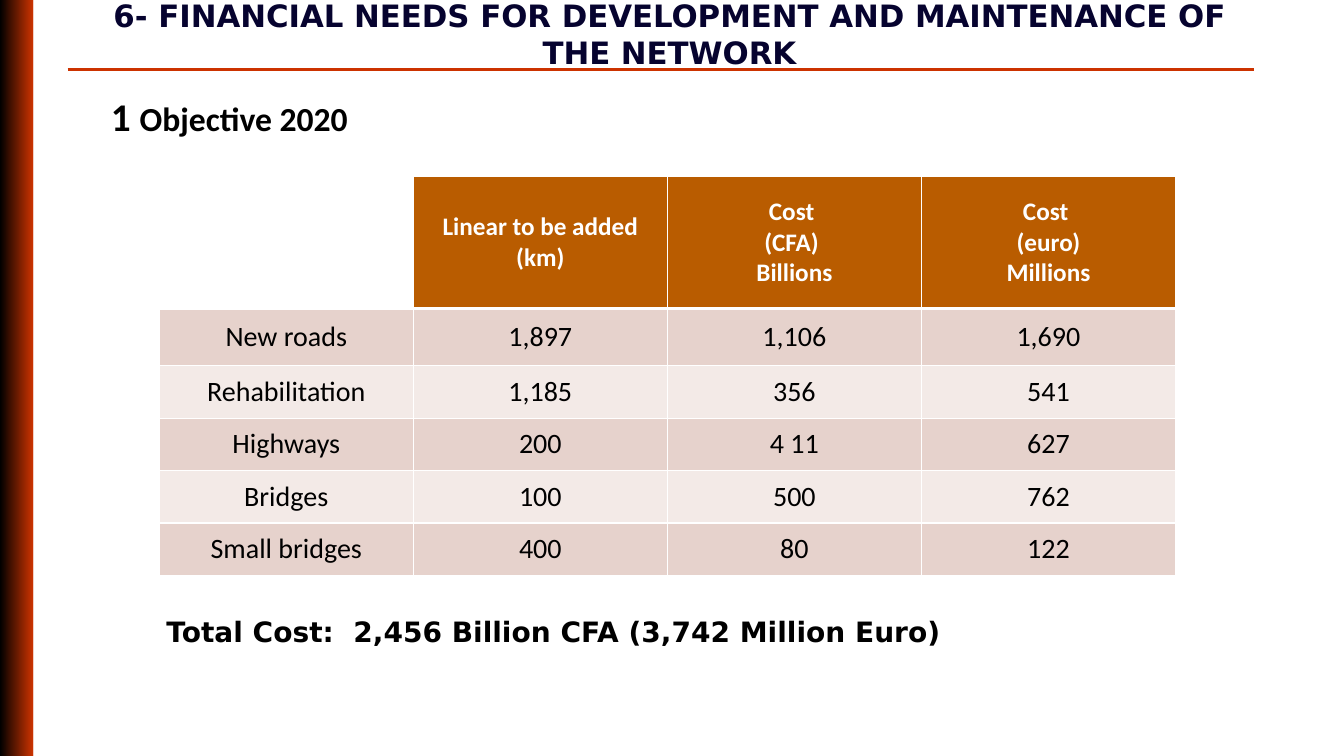
from lxml import etree
from pptx import Presentation
from pptx.dml.color import RGBColor
from pptx.enum import shapes, text
from pptx.oxml import ns
from pptx.util import Inches, Pt

BLACK = RGBColor(0x00, 0x00, 0x00)
WHITE = RGBColor(0xFF, 0xFF, 0xFF)
RED = RGBColor(0xCC, 0x33, 0x00)
NAVY = RGBColor(0x06, 0x03, 0x2F)
BROWN = RGBColor(0xB9, 0x5C, 0x00)
ROSE = RGBColor(0xE6, 0xD2, 0xCC)
PALE = RGBColor(0xF3, 0xEA, 0xE7)
SANS, BODY = "DejaVu Sans", "Calibri"
ALIGN = text.PP_ALIGN

HEAD = ["", "Linear to be added\v(km)", "Cost \n(CFA) \nBillions",
        "Cost \n(euro)\nMillions"]
ROWS = [
    ["New roads", "1,897", "1,106", "1,690"],
    ["Rehabilitation", "1,185", "356", "541"],
    ["Highways", "200", "4 11", "627"],
    ["Bridges", "100", "500", "762"],
    ["Small bridges", "400", "80", "122"],
]
HEIGHTS = [1.31, 0.57] + [0.52] * 4


def style(para, size, face, color, bold, align):
    font = para.font
    font.size, font.name, font.bold = Pt(size), face, bold
    font.color.rgb = color
    para.alignment = align


def label(slide, box, words, size, face, color, align, inset=0.0):
    frame = slide.shapes.add_textbox(*map(Inches, box)).text_frame
    frame.word_wrap = True
    frame.margin_left = frame.margin_right = Inches(inset)
    para = frame.paragraphs[0]
    para.text = words
    style(para, size, face, color, True, align)
    return para


def side(slide, left, top, width, height, count=3):
    """Stacked gradient bars down the left edge."""
    step = height / count
    for i in range(count):
        bar = slide.shapes.add_shape(
            shapes.MSO_SHAPE.RECTANGLE, Inches(left), Inches(top + i * step),
            Inches(width), Inches(step))
        bar.shadow.inherit = False
        bar.line.fill.background()
        bar.fill.gradient()
        bar.fill.gradient_angle = 0
        for stop, color in zip(bar.fill.gradient_stops, (BLACK, RED)):
            stop.color.rgb = color


def title(slide, left, top, width, height):
    """Heading with a rule beneath it."""
    y = Inches(top + 0.77)
    rule = slide.shapes.add_connector(
        shapes.MSO_CONNECTOR.STRAIGHT, Inches(left - 0.05), y,
        Inches(left + width - 0.12), y)
    rule.line.color.rgb = RED
    rule.line.width = Pt(2.25)
    etree.SubElement(rule.element.spPr, ns.qn("a:effectLst"))
    label(slide, (left, top, width, height),
          "6- FINANCIAL NEEDS FOR DEVELOPMENT AND MAINTENANCE OF THE NETWORK",
          22, SANS, NAVY, ALIGN.CENTER, 0.1)


def topic(slide, left, top, width, height):
    """Numbered subheading."""
    para = label(slide, (left, top, width, height), "", 24, BODY, BLACK,
                 ALIGN.JUSTIFY)
    para.line_spacing = 1.2
    for words, size in (("1 ", 28), ("Objective 2020", 24)):
        run = para.add_run()
        run.text = words
        run.font.size = Pt(size)


def edge(cell, low):
    """White borders; the bottom one is low points wide."""
    props = cell._tc.get_or_add_tcPr()
    for i, (name, width) in enumerate(
            (("lnL", 1), ("lnR", 1), ("lnT", 1), ("lnB", low))):
        line = etree.Element(ns.qn("a:" + name), w=str(Pt(width)))
        fill = etree.SubElement(line, ns.qn("a:solidFill"))
        etree.SubElement(fill, ns.qn("a:srgbClr"), val=str(WHITE))
        props.insert(i, line)


def costs(slide, left, top, width):
    """Table of lengths and costs."""
    grid = slide.shapes.add_table(
        len(HEIGHTS), len(HEAD), Inches(left), Inches(top), Inches(width),
        Inches(sum(HEIGHTS))).table
    for col in grid.columns:
        col.width = Inches(width / len(HEAD))
    for r, (row, high) in enumerate(zip([HEAD] + ROWS, HEIGHTS)):
        grid.rows[r].height = Inches(high)
        top_row = r == 0
        size, color = (18, WHITE) if top_row else (20, BLACK)
        back = BROWN if top_row else (ROSE if r % 2 else PALE)
        for c, words in enumerate(row):
            cell = grid.cell(r, c)
            cell.text = words
            cell.vertical_anchor = text.MSO_ANCHOR.MIDDLE
            for para in cell.text_frame.paragraphs:
                style(para, size, BODY, color, top_row, ALIGN.CENTER)
            if words:
                cell.fill.solid()
                cell.fill.fore_color.rgb = back
            else:
                cell.fill.background()
            edge(cell, 3 if r == 0 else 1)


def total(slide, left, top, width, height):
    """Sum below the table."""
    label(slide, (left, top, width, height),
          "Total Cost:  2,456 Billion CFA (3,742 Million Euro)",
          20, SANS, BLACK, ALIGN.JUSTIFY)


def main():
    deck = Presentation()
    deck.slide_width, deck.slide_height = Inches(13.33), Inches(7.5)
    slide = deck.slides.add_slide(deck.slide_layouts[6])
    side(slide, 0, 0, 0.33, 7.5)
    title(slide, 0.72, -0.08, 11.84, 0.84)
    topic(slide, 1.1, 0.77, 2.94, 0.67)
    costs(slide, 1.58, 1.75, 10.08)
    total(slide, 1.65, 6.05, 9.15, 0.44)
    deck.save("out.pptx")


if __name__ == "__main__":
    main()
